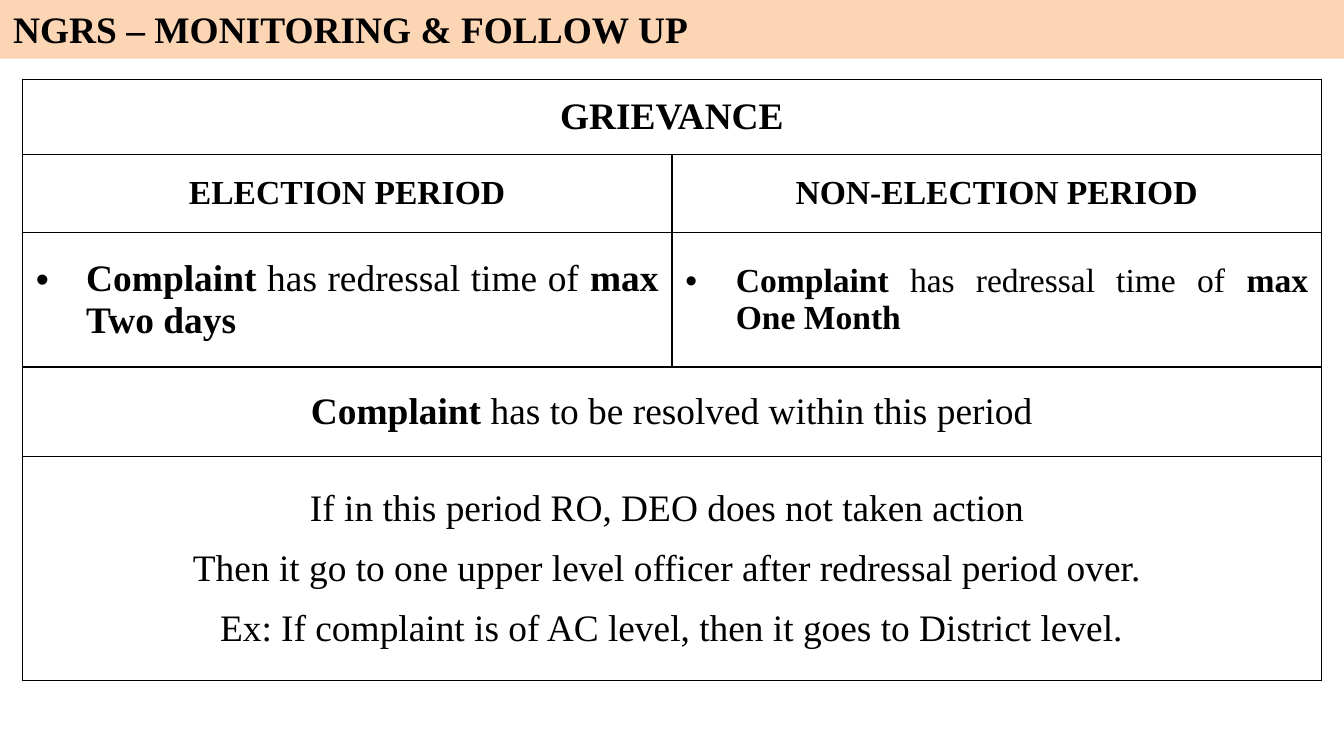
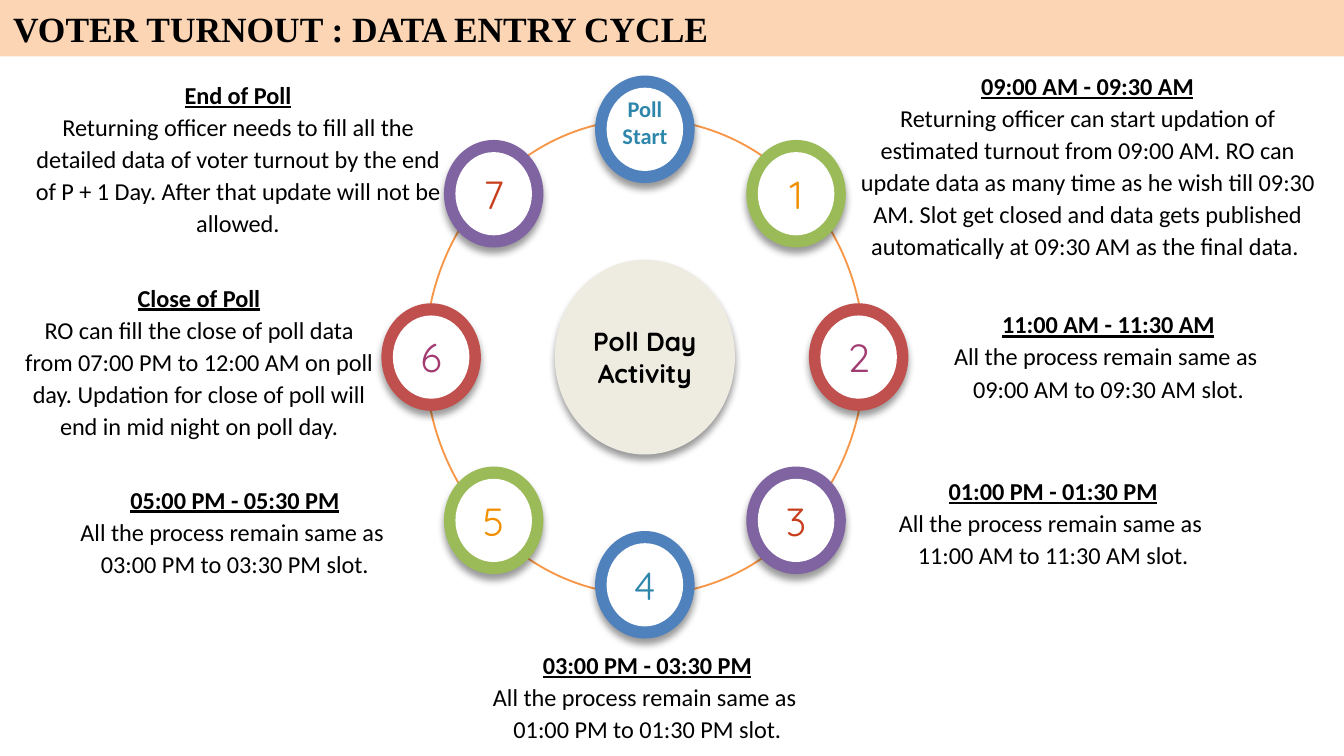
import pptx
import pptx.util
import pptx.dml.color
import pptx.enum.shapes
import pptx.enum.text
import pptx.oxml.ns
from dataclasses import dataclass
from lxml import etree

Pt = pptx.util.Pt
SHAPE = pptx.enum.shapes.MSO_SHAPE
ALIGN = pptx.enum.text.PP_ALIGN
ANCHOR = pptx.enum.text.MSO_ANCHOR
FIT = pptx.enum.text.MSO_AUTO_SIZE
qn = pptx.oxml.ns.qn


@dataclass(frozen=True)
class Theme:
    serif: str = "Times New Roman"
    sans: str = "Calibri"
    round: str = "Quicksand"
    ink: str = "000000"
    white: str = "FFFFFF"
    band: str = "FCD5B5"
    ring: str = "F79646"
    hub: str = "EEECE1"
    rims: tuple = ("4F81BD", "9BBB59", "C0504D", "8064A2")
    inks: tuple = ("2E86AB", "F18F01", "A23B72", "C73E1D")
    large: int = 20
    mid: int = 18
    digit: int = 21
    core: int = 14
    note: int = 13
    start: int = 12


T = Theme()

# Text between asterisks is bold.
TITLES = [
    ("NGRS – MONITORING & FOLLOW UP", 20, 31.5),
    ("VOTER TURNOUT : DATA ENTRY CYCLE", 19, 30.2),
]

# Each row: height, then cells of (lines, size, style)
TABLE = [
    (40.2, [(["*GRIEVANCE*"], T.large, "head")]),
    (42, [(["*ELECTION PERIOD*"], T.mid, "head"),
          (["*NON-ELECTION PERIOD*"], T.mid, "head")]),
    (72, [(["*Complaint* has redressal time of *max Two days*"], T.large, "item"),
          (["*Complaint* has redressal time of *max One Month*"], T.mid, "item")]),
    (48, [(["*Complaint *has to be resolved within this period"], T.large, "hang")]),
    (120, [(["If in this period RO, DEO does not taken action ",
             "Then it go to one upper level officer after redressal period over. ",
             "Ex: If complaint is of AC level, then it goes to District level."],
            T.large, "hang")]),
]

HUB = "Poll Day Activity"
START = ["Poll", "Start"]
SAME = "All the process remain same as "

# Each note: left, top, width, height, heading, body lines
NOTES = [
    (457.2, 40.3, 250.6, 95.8, "09:00 AM - 09:30 AM",
     ["Returning officer can start updation of estimated turnout from 09:00 AM. "
      "RO can update data as many time as he wish till 09:30 AM. Slot get closed "
      "and data gets published automatically at 09:30 AM as the final data. "]),
    (491.8, 170.6, 203.8, 39, "11:00 AM - 11:30 AM", [SAME, "09:00 AM to 09:30 AM slot."]),
    (462.2, 257, 203.8, 45, "01:00 PM - 01:30 PM", [SAME, "11:00 AM to 11:30 AM slot."]),
    (244.8, 350, 203.8, 45, "03:00 PM - 03:30 PM", [SAME, "01:00 PM to 01:30 PM slot."]),
    (23.8, 261.4, 203.8, 45, "05:00 PM - 05:30 PM", [SAME, "03:00 PM to 03:30 PM slot."]),
    (11.5, 152.6, 190, 80.6, "Close of Poll",
     ["RO can fill the close of poll data from 07:00 PM to 12:00 AM on poll day. "
      "Updation for close of poll will end in mid night on poll day."]),
    (18, 44, 218.9, 80.6, "End of Poll",
     ["Returning officer needs to fill all the detailed data of voter turnout by "
      "the end of P + 1 Day. After that update will not be allowed."]),
]

# Cycle geometry: centre, then node offsets clockwise from the top
MID_X, MID_Y = 345.5, 191.3
HOP_X = (0, 81, 114.5, 81, 0, -81, -114.5, -81)
HOP_Y = (-122, -87.5, 0, 87.5, 122, 87.5, 0, -87.5)


def rgb(code):
    return pptx.dml.color.RGBColor.from_string(code)


def add(parent, tag, **attrs):
    return etree.SubElement(parent, qn(tag), **{k: str(v) for k, v in attrs.items()})


def write(frame, lines, face, size, color=T.ink, bold=False,
          align=ALIGN.CENTER, lead=None, hang=False, mark=False, gap=0):
    """Fill a text frame, one paragraph a line."""
    for i, line in enumerate(lines):
        para = frame.paragraphs[0] if i == 0 else frame.add_paragraph()
        para.alignment = align
        if lead:
            para.line_spacing = lead
        if gap and 0 < i < len(lines) - 1:
            para.space_before = para.space_after = Pt(gap)
        if hang:
            props = para._p.get_or_add_pPr()
            props.set("marL", str(Pt(27)))
            props.set("indent", str(-Pt(27)))
            if mark:
                add(props, "a:buFont", typeface="Arial")
                add(props, "a:buChar", char="•")
            else:
                add(props, "a:buNone")
        font = para.font
        font.name, font.size, font.bold = face, Pt(size), bold
        font.color.rgb = rgb(color)
        for j, part in enumerate(line.split("*")):
            if part:
                run = para.add_run()
                run.text = part
                if j % 2:
                    run.font.bold = True


def setup(frame, pad_x=7.2, pad_y=3.6, anchor=ANCHOR.MIDDLE, fit=FIT.NONE):
    frame.word_wrap = True
    frame.auto_size = fit
    frame.vertical_anchor = anchor
    frame.margin_left = frame.margin_right = Pt(pad_x)
    frame.margin_top = frame.margin_bottom = Pt(pad_y)
    return frame


def draw(slide, kind, box, fill=None, line=None, shade=False):
    shape = slide.shapes.add_shape(kind, *map(Pt, box))
    shape.shadow.inherit = False
    if fill:
        shape.fill.solid()
        shape.fill.fore_color.rgb = rgb(fill)
    else:
        shape.fill.background()
    if line:
        shape.line.color.rgb = rgb(line)
        shape.line.width = Pt(1)
    else:
        shape.line.fill.background()
    if shade:
        glow = add(shape._element.spPr.find(qn("a:effectLst")), "a:outerShdw",
                   blurRad=Pt(4), dist=Pt(3), dir=5400000, rotWithShape=0)
        add(add(glow, "a:srgbClr", val=T.ink), "a:alpha", val=40000)
    return shape


def oval(slide, x, y, wide, high, **look):
    """Draw an ellipse around a centre point."""
    return draw(slide, SHAPE.OVAL, (x - wide / 2, y - high / 2, wide, high), **look)


def label(slide, box, **look):
    return setup(slide.shapes.add_textbox(*map(Pt, box)).text_frame, **look)


def start(deck, title, size, high):
    """Add a blank slide with its title band."""
    slide = deck.slides.add_slide(deck.slide_layouts[6])
    band = draw(slide, SHAPE.RECTANGLE, (0, 0, 720, high), T.band)
    frame = setup(band.text_frame, anchor=ANCHOR.TOP, fit=FIT.SHAPE_TO_FIT_TEXT)
    write(frame, [title], T.serif, size, bold=True, align=ALIGN.LEFT)
    return slide


def edge(cell):
    """Give a cell thin black borders and no fill."""
    props = cell._tc.get_or_add_tcPr()
    for side in ("a:lnL", "a:lnR", "a:lnT", "a:lnB"):
        line = add(props, side, w=Pt(1))
        add(add(line, "a:solidFill"), "a:srgbClr", val=T.ink)
    cell.fill.background()


def grid(slide):
    high = sum(row[0] for row in TABLE)
    table = slide.shapes.add_table(len(TABLE), 2, Pt(12), Pt(42.5),
                                   Pt(696), Pt(high)).table
    table.first_row = table.horz_banding = False
    for r, (tall, cells) in enumerate(TABLE):
        table.rows[r].height = Pt(tall)
        for c in range(2):
            edge(table.cell(r, c))
        if len(cells) == 1:
            table.cell(r, 0).merge(table.cell(r, 1))
        for c, (lines, size, style) in enumerate(cells):
            cell = table.cell(r, c)
            cell.vertical_anchor = ANCHOR.MIDDLE
            item = style == "item"
            write(cell.text_frame, lines, T.serif, size,
                  align=ALIGN.JUSTIFY if item else ALIGN.CENTER,
                  hang=style != "head", mark=item, gap=10)


def cycle(slide):
    oval(slide, MID_X, MID_Y, 235.4, 254.9, line=T.ring)
    hub = oval(slide, MID_X, MID_Y, 96.5, 104.4, fill=T.hub, shade=True)
    write(setup(hub.text_frame, 5, 2.9), [HUB], T.round, T.core, bold=True)
    for i, (dx, dy) in enumerate(zip(HOP_X, HOP_Y)):
        x, y = MID_X + dx, MID_Y + dy
        oval(slide, x, y, 53.3, 57.6, fill=T.rims[i % 4], shade=True)
        disc = oval(slide, x, y, 41, 44.6, fill=T.white)
        ink = T.inks[i % 4]
        if i:
            write(setup(disc.text_frame, 5, 2.9), [str(i)], T.round, T.digit, ink)
        else:
            frame = label(slide, (x - 24, y - 25.4, 48, 49.7), pad_x=7.2, pad_y=7.2,
                          anchor=ANCHOR.TOP, fit=FIT.SHAPE_TO_FIT_TEXT)
            write(frame, START, T.sans, T.start, ink, bold=True)


def notes(slide):
    for *box, head, body in NOTES:
        frame = label(slide, box, pad_x=0, pad_y=0)
        write(frame, [head, *body], T.sans, T.note, lead=1.1)
        font = frame.paragraphs[0].font
        font.bold = font.underline = True


def main():
    deck = pptx.Presentation()
    deck.slide_width, deck.slide_height = Pt(720), Pt(405)
    first, second = [start(deck, *title) for title in TITLES]
    grid(first)
    cycle(second)
    notes(second)
    deck.save("out.pptx")


if __name__ == "__main__":
    main()
